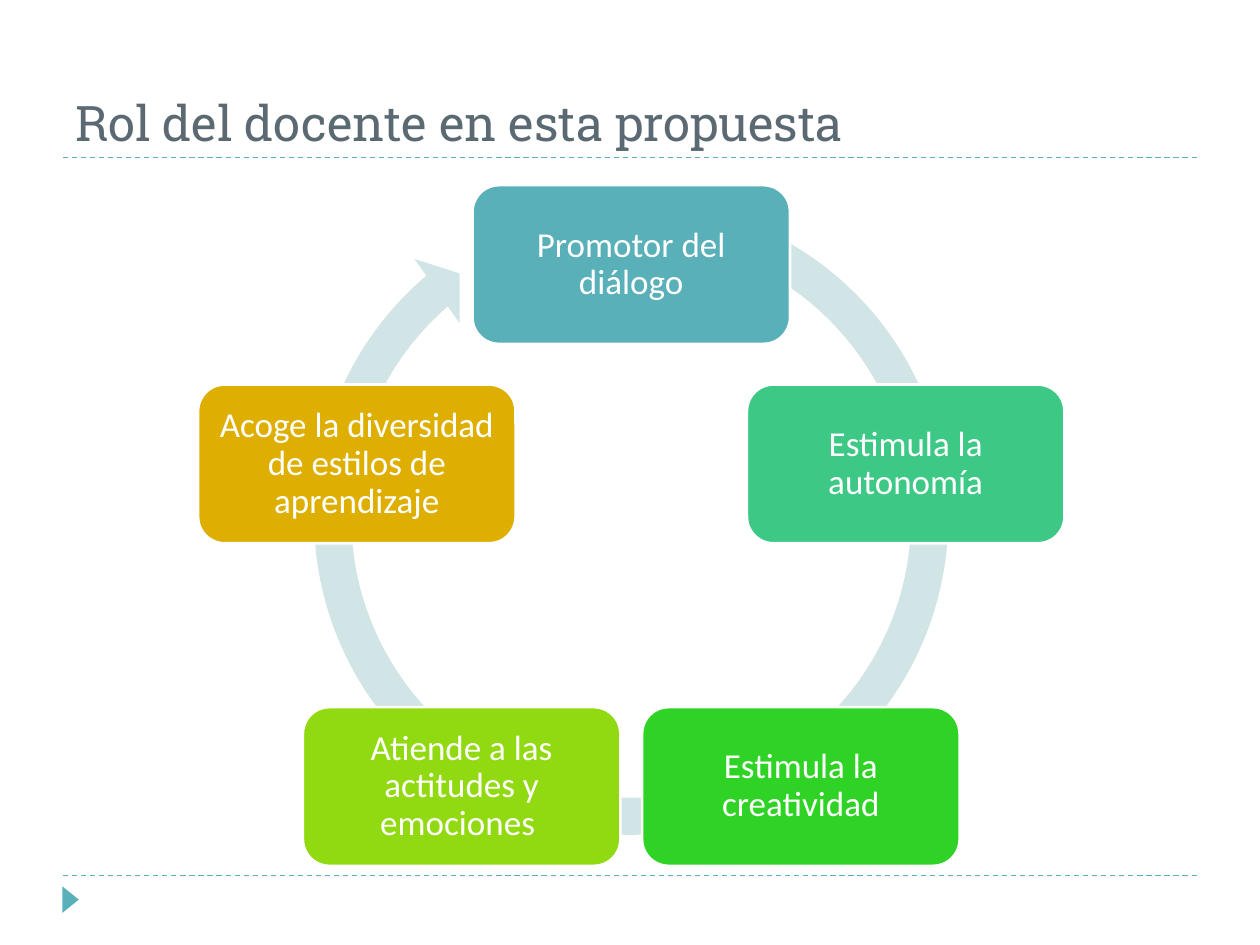
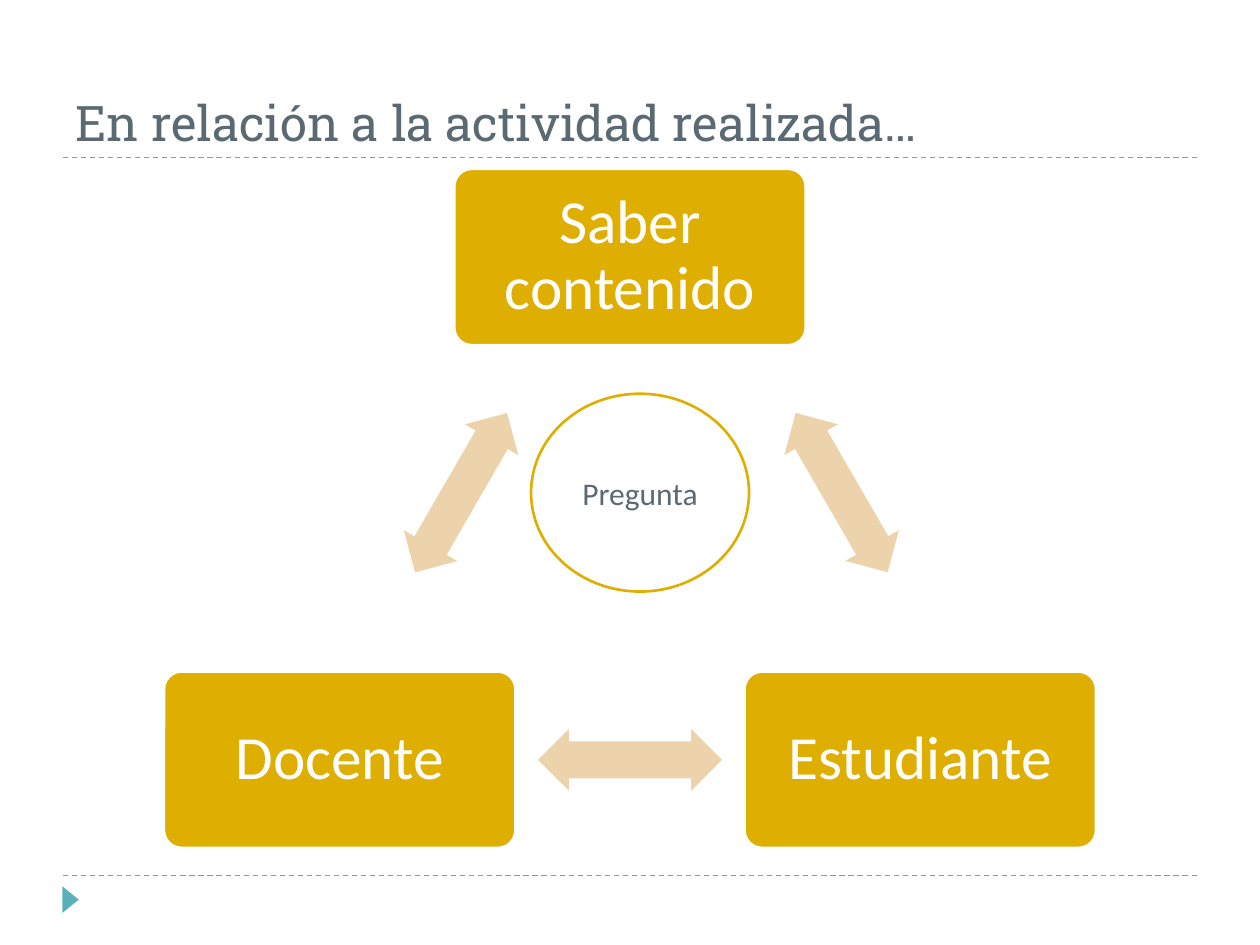
from math import cos, radians, sin

from lxml.etree import SubElement
from pptx import Presentation
from pptx.dml.color import RGBColor
from pptx.enum.dml import MSO_LINE
from pptx.enum.shapes import MSO_CONNECTOR, MSO_SHAPE
from pptx.enum.text import MSO_ANCHOR, PP_ALIGN
from pptx.oxml.ns import qn
from pptx.util import Inches, Pt

TEAL = RGBColor(0x59, 0xB0, 0xB9)
SLATE = RGBColor(0x5B, 0x69, 0x73)
WHITE = RGBColor(0xFF, 0xFF, 0xFF)
PALE_TEAL = RGBColor(0xD1, 0xE4, 0xE6)
MINT = RGBColor(0x3D, 0xC8, 0x85)
GREEN = RGBColor(0x2F, 0xD3, 0x25)
LIME = RGBColor(0x91, 0xDA, 0x11)
GOLD = RGBColor(0xDE, 0xAE, 0x00)
SAND = RGBColor(0xEC, 0xD3, 0xAB)

TITLE_FONT = "Roboto Slab"
BODY_FONT = "Calibri"

ROLES = [
    ("Promotor del diálogo", TEAL),
    ("Estimula la autonomía", MINT),
    ("Estimula la creatividad", GREEN),
    ("Atiende a las actitudes y emociones ", LIME),
    ("Acoge la diversidad de estilos de aprendizaje", GOLD),
]
TRIANGLE_CORNERS = ["Saber contenido", "Estudiante", "Docente"]
TRIANGLE_ARROWS = [(6.68, 3.91, 60), (5, 6.03, 180), (3.66, 3.91, 300)]


def add_run(paragraph, text, font, size, color):
    """Append one formatted run to a paragraph."""
    run = paragraph.add_run()
    run.text = text
    run.font.name = font
    run.font.size = Pt(size)
    run.font.color.rgb = color


def add_centered_shape(slide, kind, center, size, fill, line=None, rotation=0, adjustments=()):
    """Add a preset shape around its center point."""
    (x, y), (width, height) = center, size
    shape = slide.shapes.add_shape(
        kind, Inches(x - width / 2), Inches(y - height / 2), Inches(width), Inches(height)
    )
    shape.shadow.inherit = False
    shape.rotation = rotation
    for index, value in enumerate(adjustments):
        shape.adjustments[index] = value
    shape.fill.solid()
    shape.fill.fore_color.rgb = fill
    if line is None:
        shape.line.fill.background()
    else:
        shape.line.color.rgb = line
        shape.line.width = Pt(1.5)
    return shape


def add_label(shape, text, size, color, inset=0.1, spacing=1.0):
    """Write centered text inside a shape."""
    frame = shape.text_frame
    frame.word_wrap = True
    frame.vertical_anchor = MSO_ANCHOR.MIDDLE
    frame.margin_left = frame.margin_right = Inches(inset)
    frame.margin_top = frame.margin_bottom = Inches(inset)
    paragraph = frame.paragraphs[0]
    paragraph.alignment = PP_ALIGN.CENTER
    paragraph.line_spacing = spacing
    add_run(paragraph, text, BODY_FONT, size, color)


def add_card(slide, text, center, size, fill, radius, font_size, inset):
    """Add a rounded card with a white outline and white text."""
    card = add_centered_shape(
        slide, MSO_SHAPE.ROUNDED_RECTANGLE, center, size, fill, WHITE, adjustments=[radius]
    )
    add_label(card, text, font_size, WHITE, inset, spacing=0.9)


def ring_points(center, radius, count):
    """Return points evenly spaced clockwise on a circle, from the top."""
    x, y = center
    angles = [radians(360 * index / count) for index in range(count)]
    return [(x + radius * sin(angle), y - radius * cos(angle)) for angle in angles]


def add_rule(slide, y):
    """Add a dashed line across the slide."""
    rule = slide.shapes.add_connector(
        MSO_CONNECTOR.STRAIGHT, Inches(0.5), Inches(y), Inches(9.5), Inches(y)
    )
    rule.line.color.rgb = TEAL
    rule.line.width = Pt(0.75)
    rule.line.dash_style = MSO_LINE.DASH
    SubElement(rule.element.spPr, qn("a:effectLst"))
    return rule


def prepare_layout(layout, slide):
    """Give the layout its title box, rules and footer marker."""
    title = layout.placeholders[0]
    title.left, title.top = Inches(0.5), Inches(0.36)
    title.width, title.height = Inches(9), Inches(0.89)
    title.text_frame.vertical_anchor = MSO_ANCHOR.BOTTOM
    decorations = [add_rule(slide, 6.95), add_rule(slide, 1.25)]
    decorations.append(
        add_centered_shape(
            slide, MSO_SHAPE.ISOSCELES_TRIANGLE, (0.56, 7.14), (0.21, 0.13), TEAL, rotation=90
        )
    )
    for number, decoration in enumerate(decorations, start=20):
        decoration.element.xpath(".//p:cNvPr")[0].set("id", str(number))
        layout.shapes.element.append(decoration.element)


def set_title(slide, text):
    """Fill the title placeholder."""
    paragraph = slide.shapes.title.text_frame.paragraphs[0]
    paragraph.alignment = PP_ALIGN.LEFT
    add_run(paragraph, text, TITLE_FONT, 28, SLATE)


def build_role_cycle(slide):
    """Draw the cycle of teacher roles."""
    set_title(slide, "Rol del docente en esta propuesta")
    add_centered_shape(
        slide, MSO_SHAPE.CIRCULAR_ARROW, (5.01, 4.11), (5.36, 5.36), PALE_TEAL,
        adjustments=[0.055, 3.307, 137.655, 173.923, 0.058],
    )
    centers = ring_points((5.01, 4.39), 2.29, len(ROLES))
    for (text, fill), center in zip(ROLES, centers):
        add_card(slide, text, center, (2.52, 1.26), fill, 0.167, 20, 0.08)


def build_question_triangle(slide):
    """Draw the triangle of content, student and teacher."""
    set_title(slide, "En relación a la actividad realizada…")
    centers = ring_points((5, 4.7), 2.66, len(TRIANGLE_CORNERS))
    for text, center in zip(TRIANGLE_CORNERS, centers):
        add_card(slide, text, center, (2.79, 1.4), GOLD, 0.1, 35, 0.15)
    for x, y, rotation in TRIANGLE_ARROWS:
        add_centered_shape(
            slide, MSO_SHAPE.LEFT_RIGHT_ARROW, (x, y), (1.46, 0.49), SAND,
            rotation=rotation, adjustments=[0.6, 0.5],
        )
    question = add_centered_shape(
        slide, MSO_SHAPE.OVAL, (5.08, 3.91), (1.73, 1.57), WHITE, GOLD
    )
    add_label(question, "Pregunta", 18, SLATE)


def main():
    """Build and save the presentation."""
    presentation = Presentation()
    presentation.slide_width, presentation.slide_height = Inches(10), Inches(7.5)
    layout = presentation.slide_layouts[5]
    cycle_slide, triangle_slide = [presentation.slides.add_slide(layout) for _ in range(2)]
    prepare_layout(layout, cycle_slide)
    build_role_cycle(cycle_slide)
    build_question_triangle(triangle_slide)
    presentation.save("out.pptx")


if __name__ == "__main__":
    main()
